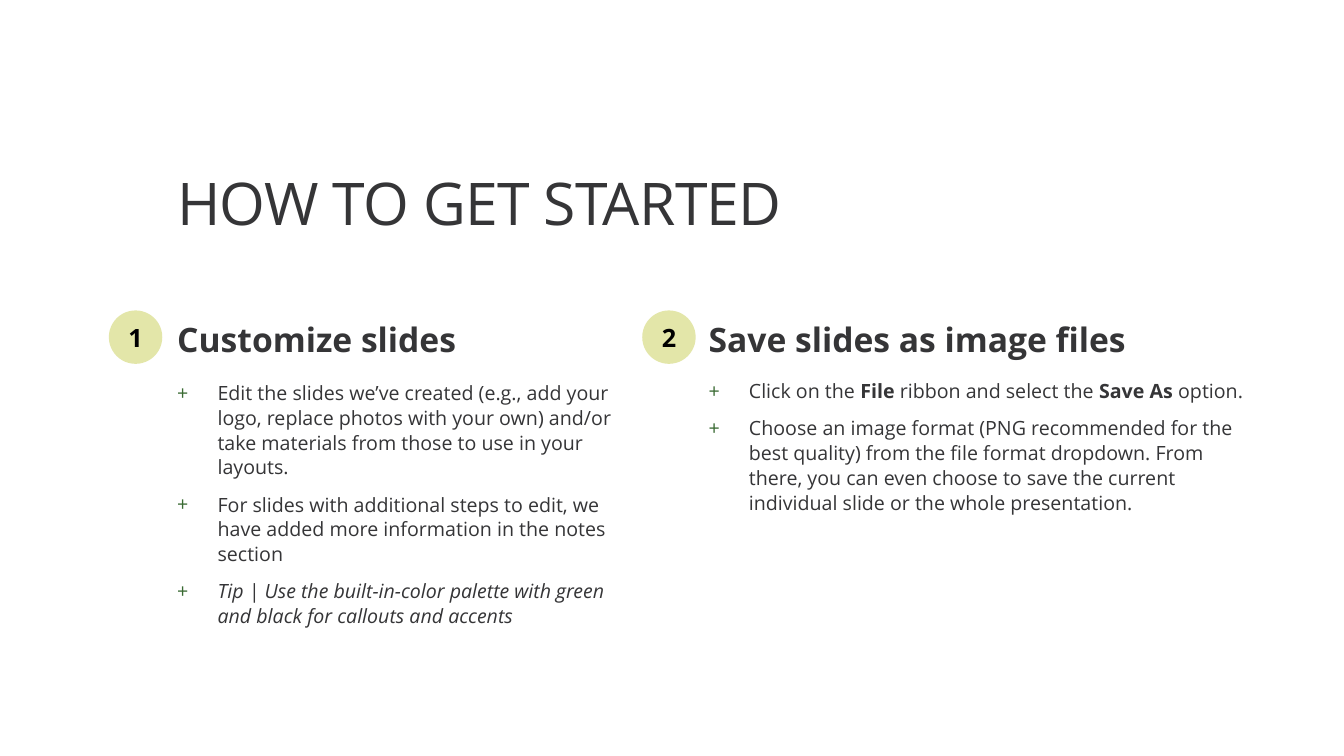
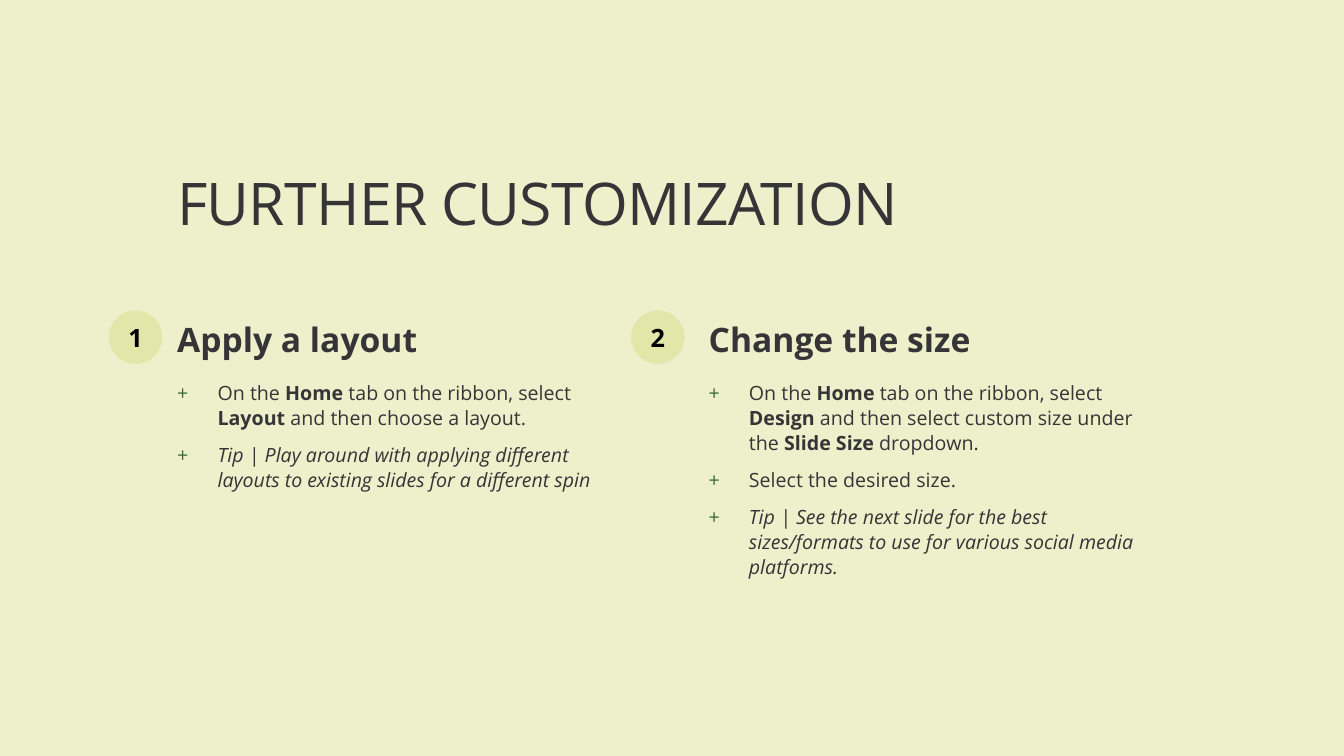
from lxml.etree import SubElement
from pptx import Presentation
from pptx.dml.color import RGBColor
from pptx.enum.shapes import MSO_SHAPE
from pptx.enum.text import MSO_ANCHOR as Anchor, PP_ALIGN as Align
from pptx.oxml.ns import qn
from pptx.util import Pt

PX = 9144  # 100 px to the inch
FONT = "Open Sans"
INK = RGBColor(0x35, 0x35, 0x37)
BLACK = RGBColor(0, 0, 0)
WHITE = RGBColor(0xFF, 0xFF, 0xFF)
PALE_GREEN = RGBColor(0xEE, 0xF0, 0xCB)
DISC_GREEN = RGBColor(0xE3, 0xE6, 0xA9)
BULLET_GREEN = RGBColor(0x39, 0x6A, 0x32)

TITLE_STYLE = dict(size=Pt(42))
HEADING_STYLE = dict(size=Pt(24), bold=True)
BODY_STYLE = dict(size=Pt(14))
NUMBER_STYLE = dict(size=Pt(18), bold=True)

TITLE_BOX = (166, 166, 1000, 86)
HEADING_TOP, HEADING_HEIGHT = 295, 66
DISC_TOP, DISC_SIZE = 308, 53
INDENT = 40
LEFT = dict(x=166, disc_x=108, heading_w=474, body=(372, 474, 268))
RIGHT = dict(x=693, disc_x=626, heading_w=474, body=(372, 474, 268))
WIDE_RIGHT = dict(x=693, disc_x=637, heading_w=532, body=(370, 557, 318))

# Bold words stand between double asterisks; lines that open with TIP are italic.
TIP = "Tip |"
SLIDES = [
    dict(title="HOW TO GET STARTED", background=WHITE, columns=[
        (LEFT, "Customize slides", [
            "Edit the slides we’ve created (e.g., add your logo, replace photos with "
            "your own) and/or take materials from those to use in your layouts.",
            "For slides with additional steps to edit, we have added more "
            "information in the notes section",
            "Tip | Use the built-in-color palette with green and black for "
            "callouts and accents",
        ]),
        (WIDE_RIGHT, "Save slides as image files", [
            "Click on the **File** ribbon and select the **Save As** option.",
            "Choose an image format (PNG recommended for the best quality) from the "
            "file format dropdown. From there, you can even choose to save the "
            "current individual slide or the whole presentation.",
        ]),
    ]),
    dict(title="FURTHER CUSTOMIZATION", background=PALE_GREEN, columns=[
        (LEFT, "Apply a layout", [
            "On the **Home **tab on the ribbon, select **Layout** and then "
            "choose a layout.",
            "Tip | Play around with applying different layouts to existing slides "
            "for a different spin",
        ]),
        (RIGHT, "Change the size", [
            "On the **Home **tab on the ribbon, select **Design** and then select "
            "custom size under the **Slide Size **dropdown.",
            "Select the desired size.",
            "Tip | See the next slide for the best sizes/formats to use for "
            "various social media platforms.",
        ]),
    ]),
]


def emu(*lengths):
    return [round(n * PX) for n in lengths]


def add_run(p, text, color=INK, **style):
    r = p.add_run()
    r.text = text
    r.font.color.rgb = color
    for name, value in dict(name=FONT, **style).items():
        setattr(r.font, name, value)
    return r


def add_text_frame(s, box, anchor=Anchor.TOP):
    tf = s.shapes.add_textbox(*emu(*box)).text_frame
    tf.word_wrap = True
    tf.vertical_anchor = anchor
    return tf


def set_bullet(p):
    pPr = p._p.get_or_add_pPr()
    indent, = emu(INDENT)
    pPr.set("marL", str(indent))
    pPr.set("indent", str(-indent))
    color = SubElement(pPr, qn("a:buClr"))
    SubElement(color, qn("a:srgbClr"), val=str(BULLET_GREEN))
    SubElement(pPr, qn("a:buFont"), typeface=FONT)
    SubElement(pPr, qn("a:buChar"), char="+")


def add_title(s, text):
    p = add_text_frame(s, TITLE_BOX).paragraphs[0]
    p.line_spacing = 0.95
    r = add_run(p, text, **TITLE_STYLE)
    r._r.get_or_add_rPr().set("spc", "-50")


def add_bullets(s, box, lines):
    tf = add_text_frame(s, box)
    for i, line in enumerate(lines):
        p = tf.add_paragraph() if i else tf.paragraphs[0]
        set_bullet(p)
        p.line_spacing = 1.05
        if i:
            p.space_before = Pt(9)
        for k, part in enumerate(line.split("**")):
            add_run(p, part, bold=k % 2 == 1, italic=line.startswith(TIP),
                    **BODY_STYLE)


def add_number_disc(s, x, number):
    disc = s.shapes.add_shape(MSO_SHAPE.OVAL,
                              *emu(x, DISC_TOP, DISC_SIZE, DISC_SIZE))
    disc.shadow.inherit = False
    disc.fill.solid()
    disc.fill.fore_color.rgb = DISC_GREEN
    disc.line.fill.background()
    tf = disc.text_frame
    tf.vertical_anchor = Anchor.MIDDLE
    for side in ("left", "top", "right", "bottom"):
        setattr(tf, f"margin_{side}", 0)
    p = tf.paragraphs[0]
    p.alignment = Align.CENTER
    add_run(p, str(number), BLACK, **NUMBER_STYLE)


def add_column(s, number, place, heading, lines):
    x = place["x"]
    tf = add_text_frame(s, (x, HEADING_TOP, place["heading_w"], HEADING_HEIGHT),
                        Anchor.BOTTOM)
    add_run(tf.paragraphs[0], heading, **HEADING_STYLE)
    add_bullets(s, (x, *place["body"]), lines)
    add_number_disc(s, place["disc_x"], number)


def main():
    prs = Presentation()
    prs.slide_width, prs.slide_height = emu(1333, 750)
    for content in SLIDES:
        s = prs.slides.add_slide(prs.slide_layouts[6])
        fill = s.background.fill
        fill.solid()
        fill.fore_color.rgb = content["background"]
        add_title(s, content["title"])
        for number, column in enumerate(content["columns"], 1):
            add_column(s, number, *column)
    prs.save("out.pptx")


if __name__ == "__main__":
    main()
